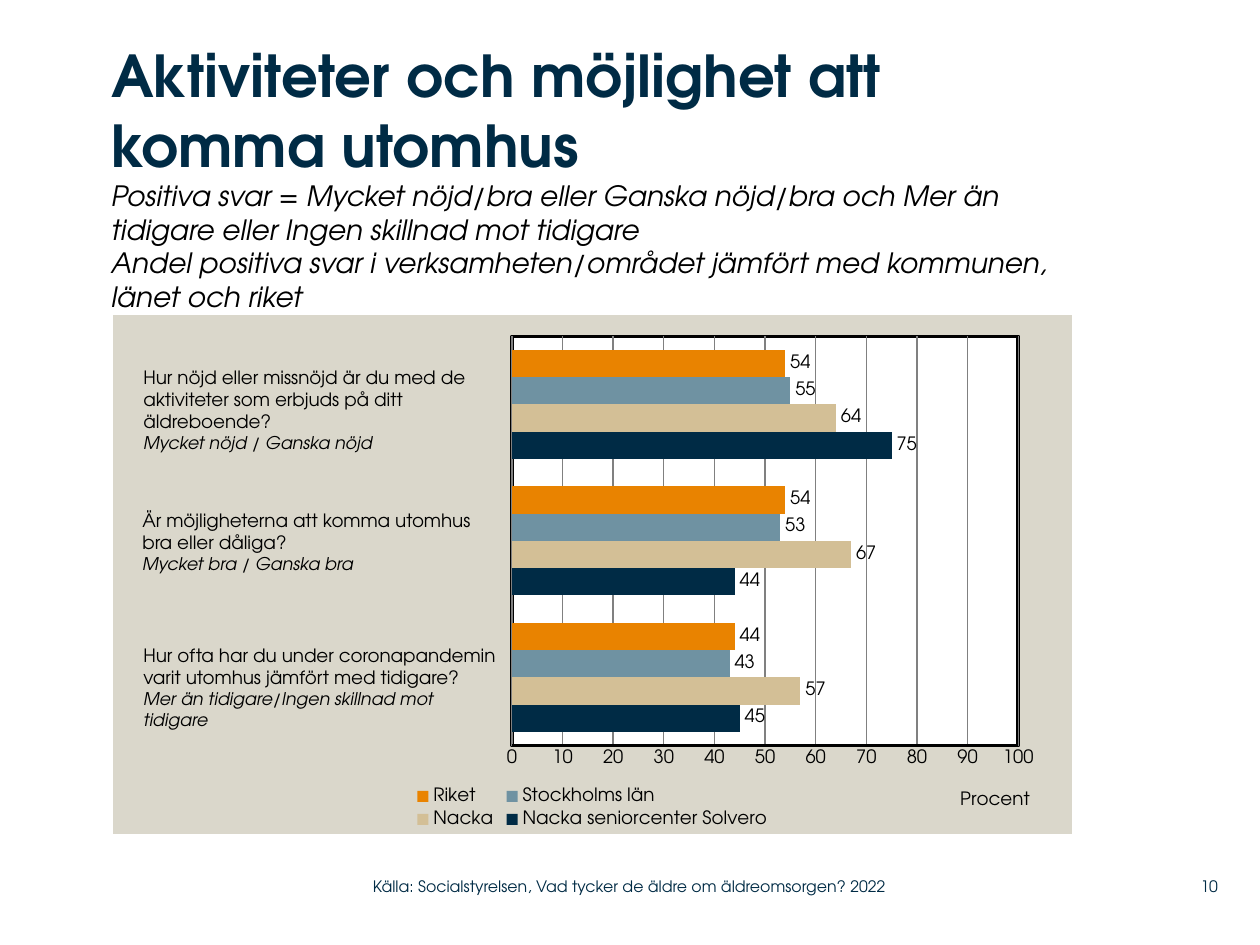
from copy import deepcopy
from typing import NamedTuple

from lxml import etree
from pptx import Presentation
from pptx import util as u
from pptx.chart.data import CategoryChartData
from pptx.dml.color import RGBColor
from pptx.enum import chart as ch, text
from pptx.oxml import parse_xml
from pptx.oxml.ns import nsdecls, qn

PX = 914400 / 126
FONT = "TeX Gyre Adventor"
NAVY = RGBColor(0x00, 0x2B, 0x45)
SAND = RGBColor(0xD3, 0xBF, 0x96)
STEEL = RGBColor(0x6F, 0x92, 0xA2)
AMBER = RGBColor(0xE9, 0x83, 0x00)
STONE = RGBColor(0xDA, 0xD7, 0xCB)
GREY = RGBColor(0x80, 0x80, 0x80)
BLACK = RGBColor(0, 0, 0)
WHITE = RGBColor(255, 255, 255)


class Box(NamedTuple):
    x: int
    y: int
    w: int
    h: int


class Query(NamedTuple):
    box: Box
    lines: list[str]
    scale: str


class Bars(NamedTuple):
    name: str
    vals: tuple[int, ...]
    color: RGBColor


QUERIES = [
    Query(Box(131, 360, 378, 123),
          ["Hur nöjd eller missnöjd är du med de aktiviteter som erbjuds på ditt äldreboende?"],
          "Mycket nöjd / Ganska nöjd"),
    Query(Box(130, 503, 379, 102),
          ["Är möjligheterna att komma utomhus", "bra eller dåliga?"],
          "Mycket bra / Ganska bra"),
    Query(Box(131, 638, 379, 100),
          ["Hur ofta har du under coronapandemin varit utomhus jämfört med tidigare?"],
          "Mer än tidigare/Ingen skillnad mot tidigare"),
]
SERIES = [
    Bars("Nacka seniorcenter Solvero", (45, 44, 75), NAVY),
    Bars("Nacka", (57, 67, 64), SAND),
    Bars("Stockholms län", (43, 53, 55), STEEL),
    Bars("Riket", (44, 54, 54), AMBER),
]


def emu(box: Box) -> list[int]:
    return [round(v * PX) for v in box]


def style(font, size: float, color: RGBColor = BLACK, **more) -> None:
    look = {"name": FONT, "size": u.Pt(size), "bold": False, **more}
    for key, val in look.items():
        setattr(font, key, val)
    font.color.rgb = color


def add_run(par, words: str, size: float, color: RGBColor = BLACK, **more):
    run = par.add_run()
    run.text = words
    style(run.font, size, color, **more)
    return run


def add_break(par, run) -> None:
    """Break the line, keeping the run's text size."""
    par.add_line_break()
    par._p.findall(qn("a:br"))[-1].append(deepcopy(run._r.rPr))


def set_frame(frame, inset: bool, anchor) -> None:
    look = {"word_wrap": True, "vertical_anchor": anchor,
            "auto_size": text.MSO_AUTO_SIZE.NONE}
    if not inset:
        look |= {f"margin_{side}": 0 for side in ("left", "top", "right", "bottom")}
    for key, val in look.items():
        setattr(frame, key, val)


def add_title(slide) -> None:
    title = slide.shapes.title
    for key, val in zip(("left", "top", "width", "height"), emu(Box(111, 40, 983, 238))):
        setattr(title, key, val)
    set_frame(title.text_frame, False, text.MSO_ANCHOR.TOP)
    par = title.text_frame.paragraphs[0]
    par.alignment = text.PP_ALIGN.LEFT
    add_run(par, "Aktiviteter och möjlighet att komma utomhus", 33, NAVY, bold=True)
    lines = [
        " ",
        "Positiva svar = Mycket nöjd/bra eller Ganska nöjd/bra och Mer än "
        "tidigare eller Ingen skillnad mot tidigare",
        "Andel positiva svar i verksamheten/området jämfört med kommunen, länet och riket",
    ]
    for i, line in enumerate(lines):
        run = add_run(par, line, 16, italic=True)
        if i < len(lines) - 1:
            add_break(par, run)


def add_query(slide, query: Query) -> None:
    frame = slide.shapes.add_textbox(*emu(query.box)).text_frame
    set_frame(frame, True, text.MSO_ANCHOR.TOP)
    for i, line in enumerate(query.lines):
        par = frame.add_paragraph() if i else frame.paragraphs[0]
        add_run(par, line, 10.5)
    add_run(frame.add_paragraph(), query.scale, 10, italic=True)


def add_note(slide, box: Box, words: str, align) -> None:
    frame = slide.shapes.add_textbox(*emu(box)).text_frame
    set_frame(frame, False, text.MSO_ANCHOR.MIDDLE)
    frame.paragraphs[0].alignment = align
    add_run(frame.paragraphs[0], words, 9, NAVY)


def fill_xml(color: RGBColor, line: str = "<a:ln><a:noFill/></a:ln>"):
    return parse_xml(f'<c:spPr {nsdecls("c", "a")}><a:solidFill><a:srgbClr val="{color}"/>'
                     f"</a:solidFill>{line}</c:spPr>")


def place(part, after: str, target: str = "", **spots: float) -> None:
    """Give a chart part a manual layout after its named child."""
    for old in part.findall(qn("c:layout")):
        part.remove(old)
    layout = etree.Element(qn("c:layout"))
    manual = etree.SubElement(layout, qn("c:manualLayout"))
    vals = {"layoutTarget": target} if target else {}
    vals |= {"xMode": "edge", "yMode": "edge", **spots}
    for key, val in vals.items():
        etree.SubElement(manual, qn(f"c:{key}")).set("val", str(val))
    prior = part.find(qn(after)) if after else None
    if prior is None:
        part.insert(0, layout)
    else:
        prior.addnext(layout)


def add_bars(slide) -> None:
    data = CategoryChartData()
    data.categories = ["1", "2", "3"]
    for bars in SERIES:
        data.add_series(bars.name, bars.vals)
    chart = slide.shapes.add_chart(ch.XL_CHART_TYPE.BAR_CLUSTERED,
                                   *emu(Box(113, 315, 959, 519)), data).chart
    style(chart.font, 10.5)
    chart.has_title = False

    # Bars and value labels
    plot = chart.plots[0]
    plot.gap_width, plot.overlap, plot.vary_by_categories = 100, 0, False
    for bars, series in zip(SERIES, plot.series):
        series.format.fill.solid()
        series.format.fill.fore_color.rgb = bars.color
        labels = series.data_labels
        labels.show_value = True
        labels.position = ch.XL_LABEL_POSITION.OUTSIDE_END
        style(labels.font, 10.5)

    # Axes
    chart.category_axis.visible = False
    axis = chart.value_axis
    look = {"minimum_scale": 0, "maximum_scale": 100, "major_unit": 10,
            "major_tick_mark": ch.XL_TICK_MARK.NONE, "has_major_gridlines": True}
    for key, val in look.items():
        setattr(axis, key, val)
    for line, color, width in ((axis.format.line, BLACK, 2),
                               (axis.major_gridlines.format.line, GREY, 0.75)):
        line.color.rgb = color
        line.width = u.Pt(width)
    style(axis.tick_labels.font, 10.5)
    title = axis.axis_title
    add_run(title.text_frame.paragraphs[0], "Procent", 10.5)
    place(title._element, "c:tx", x=0.88, y=0.91)

    # Legend
    chart.has_legend = True
    legend = chart.legend
    legend.position = ch.XL_LEGEND_POSITION.BOTTOM
    legend.include_in_layout = False
    style(legend.font, 10.5)
    place(legend._element, "c:legendPos", x=0.31, y=0.9, w=0.38, h=0.1)

    # Plot area and background
    area = chart._chartSpace.chart.plotArea
    place(area, "", "inner", x=0.416, y=0.041, w=0.528, h=0.789)
    border = f'<a:ln w="25400"><a:solidFill><a:srgbClr val="{BLACK}"/></a:solidFill></a:ln>'
    area.append(fill_xml(WHITE, border))
    chart._chartSpace.chart.addnext(fill_xml(STONE))


def main() -> None:
    deck = Presentation()
    deck.slide_width, deck.slide_height = u.Inches(10), u.Inches(7.5)
    slide = deck.slides.add_slide(deck.slide_layouts[5])
    add_title(slide)
    add_bars(slide)
    for query in QUERIES:
        add_query(slide, query)

    # Footer
    add_note(slide, Box(373, 868, 558, 37),
             "Källa: Socialstyrelsen, Vad tycker de äldre om äldreomsorgen? 2022",
             text.PP_ALIGN.LEFT)
    add_note(slide, Box(1159, 868, 59, 37), "10", text.PP_ALIGN.RIGHT)
    deck.save("out.pptx")


if __name__ == "__main__":
    main()
